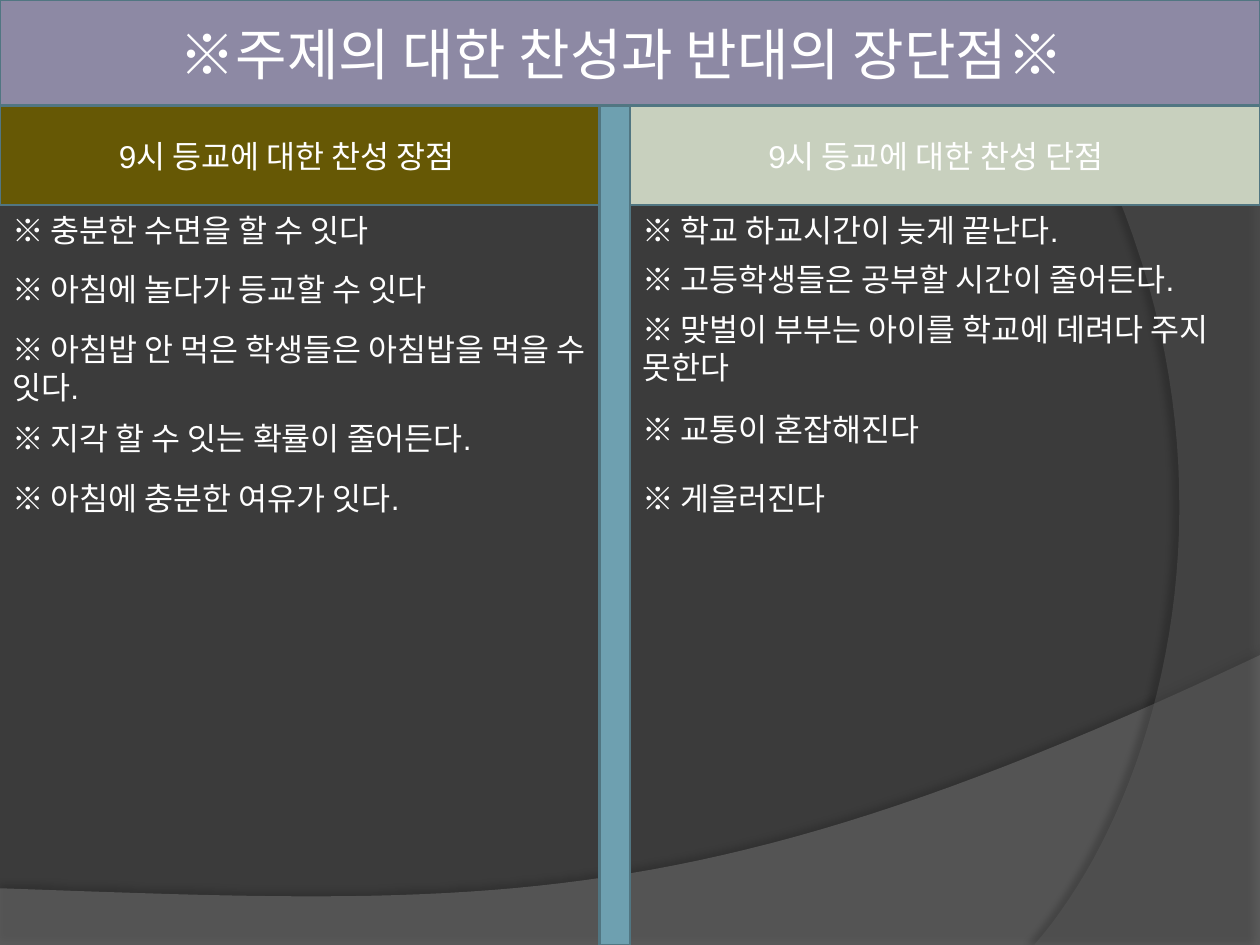
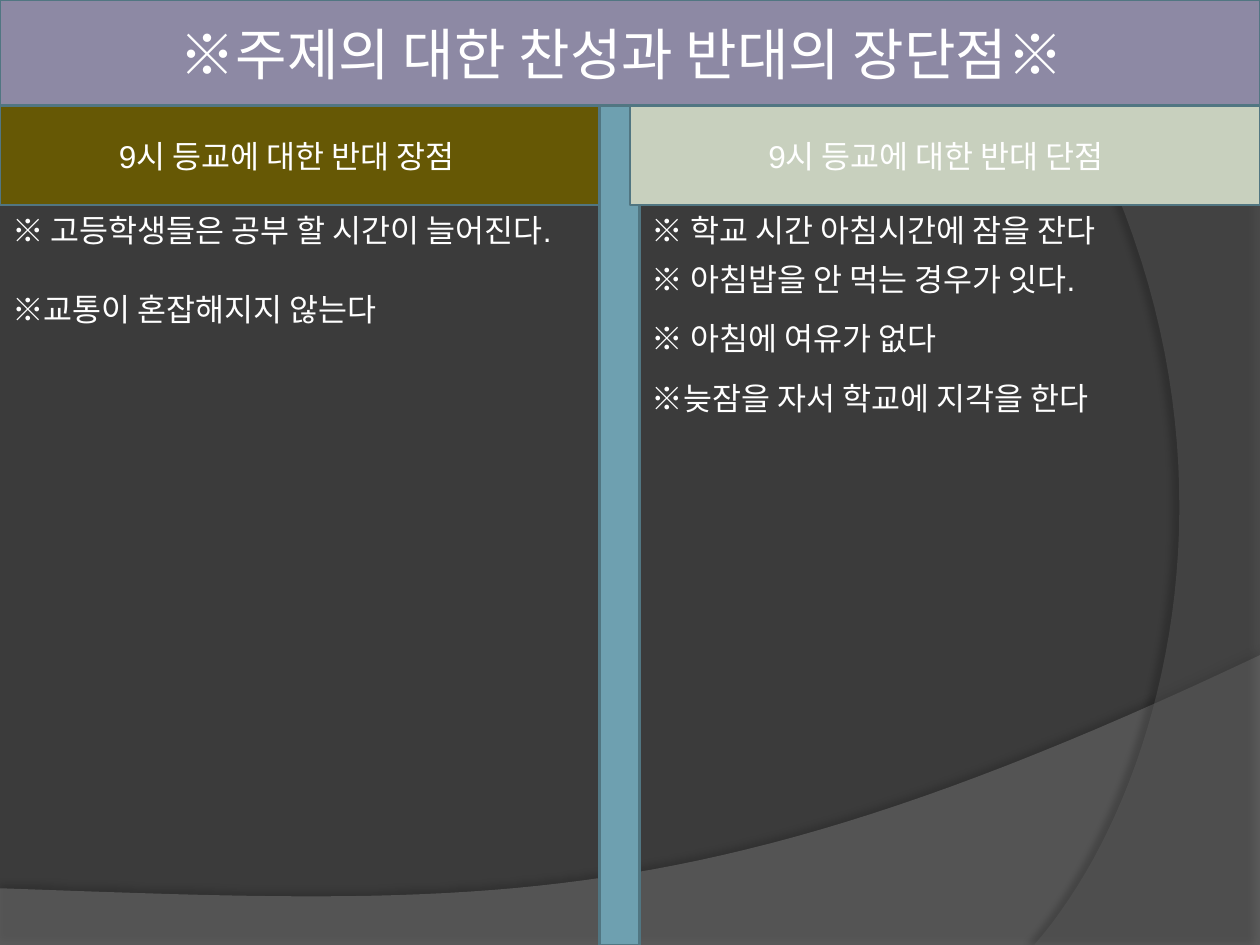
import dataclasses

import pptx
import pptx.dml.color
import pptx.enum.shapes
import pptx.enum.text
import pptx.oxml
import pptx.oxml.ns
import pptx.util
from lxml import etree

Pt = pptx.util.Pt


@dataclasses.dataclass(frozen=True)
class Theme:
    font: str = "Arial"
    title_size: int = 32
    body_size: int = 18
    text: str = "FFFFFF"
    background: str = "3B3B3B"
    title_band: str = "8D89A4"
    pros_band: str = "665805"
    cons_band: str = "C8D0BE"
    divider: str = "6EA0B0"
    outline: str = "517682"
    wave: str = "7F7F7F"
    arc: str = "5E5E5E"


THEME = Theme()

# Layout, in points
WIDTH, HEIGHT = 720, 540
TITLE_HEIGHT = 60.5
HEADER_HEIGHT = 56.7
PROS_WIDTH = 342.7
CONS_LEFT = 360
ITEM_HEIGHTS = {1: 29.1, 2: 50.9}  # by number of lines
SPACE_RATIO = 0.278  # width of a space relative to the type size

TITLE = "※주제의 대한 찬성과 반대의 장단점※"

# Each item: text, top, number of lines
SLIDES = [
    {
        "side": "찬성",
        "cons_text_left": 360,
        "pros": [
            ("※ 충분한 수면을 할 수 잇다", 117, 1),
            ("※ 아침에 놀다가 등교할 수 잇다", 151, 1),
            ("※ 아침밥 안 먹은 학생들은 아침밥을 먹을 수 잇다.", 185, 2),
            ("※ 지각 할 수 잇는 확률이 줄어든다.", 236, 1),
            ("※ 아침에 충분한 여유가 잇다.", 270, 1),
        ],
        "cons": [
            ("※ 학교 하교시간이 늦게 끝난다.", 117, 1),
            ("※ 고등학생들은 공부할 시간이 줄어든다.", 145, 1),
            ("※ 맞벌이 부부는 아이를 학교에 데려다 주지 못한다", 173.5, 2),
            ("※ 교통이 혼잡해진다", 230.5, 1),
            ("※ 게을러진다", 270, 1),
        ],
    },
    {
        "side": "반대",
        "cons_text_left": 365.5,
        "pros": [
            ("※ 고등학생들은 공부 할 시간이 늘어진다.", 117, 2),
            ("※교통이 혼잡해지지 않는다", 162, 1),
        ],
        "cons": [
            ("※ 학교 시간 아침시간에 잠을 잔다", 117, 1),
            ("※ 아침밥을 안 먹는 경우가 잇다.", 145, 1),
            ("※ 아침에 여유가 없다", 179, 1),
            ("※늦잠을 자서 학교에 지각을 한다", 213, 1),
        ],
    },
]


def rgb(value):
    return pptx.dml.color.RGBColor.from_string(value)


def style_text(frame, size):
    for para in frame.paragraphs:
        for span in para.runs:
            span.font.name = THEME.font
            span.font.size = Pt(size)
            span.font.color.rgb = rgb(THEME.text)


def add_band(page, left, top, width, height, fill, text="", size=THEME.body_size,
             shift_spaces=0):
    """Outlined rectangle; shift_spaces moves its centred text left."""
    band = page.shapes.add_shape(pptx.enum.shapes.MSO_SHAPE.RECTANGLE,
                                 Pt(left), Pt(top), Pt(width), Pt(height))
    band.shadow.inherit = False
    band.fill.solid()
    band.fill.fore_color.rgb = rgb(fill)
    band.line.color.rgb = rgb(THEME.outline)
    band.line.width = Pt(1.5)
    if text:
        frame = band.text_frame
        frame.text = text
        frame.word_wrap = True
        frame.vertical_anchor = pptx.enum.text.MSO_ANCHOR.MIDDLE
        frame.margin_right = Pt(7.2 + shift_spaces * SPACE_RATIO * size)
        frame.paragraphs[0].alignment = pptx.enum.text.PP_ALIGN.CENTER
        style_text(frame, size)


def add_item(page, left, text, top, lines):
    box = page.shapes.add_textbox(Pt(left), Pt(top), Pt(PROS_WIDTH),
                                  Pt(ITEM_HEIGHTS[lines]))
    frame = box.text_frame
    frame.word_wrap = True
    frame.auto_size = pptx.enum.text.MSO_AUTO_SIZE.SHAPE_TO_FIT_TEXT
    frame.text = text
    style_text(frame, THEME.body_size)


def curve(start, control_1, control_2, end, steps=48):
    """Points along a cubic curve, without its start."""
    points = []
    for step in range(1, steps + 1):
        t = step / steps
        weights = ((1 - t) ** 3, 3 * t * (1 - t) ** 2, 3 * t * t * (1 - t), t ** 3)
        corners = (start, control_1, control_2, end)
        points.append(tuple(sum(w * corner[axis] for w, corner in zip(weights, corners))
                            for axis in (0, 1)))
    return points


def add_sweep(page, points, fill, opacity, shadow_opacity, distance, direction):
    """Translucent background outline with a soft shadow."""
    builder = page.shapes.build_freeform(Pt(points[0][0]), Pt(points[0][1]))
    builder.add_line_segments([(Pt(x), Pt(y)) for x, y in points[1:]], close=True)
    sweep = builder.convert_to_shape()
    sweep.fill.solid()
    sweep.fill.fore_color.rgb = rgb(fill)
    sweep.line.fill.background()
    sweep.shadow.inherit = False
    qn = pptx.oxml.ns.qn
    color = sweep.fill._xPr.find(qn("a:solidFill"))[0]
    etree.SubElement(color, qn("a:alpha"), val=str(opacity * 1000))
    effects = sweep._element.spPr.find(qn("a:effectLst"))
    shadow = etree.SubElement(effects, qn("a:outerShdw"), blurRad=str(Pt(4)),
                              dist=str(Pt(distance)), dir=str(direction * 60000),
                              algn="ctr", rotWithShape="0")
    shadow_color = etree.SubElement(shadow, qn("a:srgbClr"), val="000000")
    etree.SubElement(shadow_color, qn("a:alpha"), val=str(shadow_opacity * 1000))


def add_backdrop(page):
    page.background.fill.solid()
    page.background.fill.fore_color.rgb = rgb(THEME.background)
    wave = [(0, 507.6), (0, HEIGHT), (WIDTH, HEIGHT), (WIDTH, 374.4)]
    wave += curve(wave[-1], (402.5, 524.9), (281.5, 517.7), wave[0])
    add_sweep(page, wave, THEME.wave, 45, 35, 3.5, 270)
    arc = [(WIDTH, 1.4), (WIDTH, HEIGHT), (591, HEIGHT)]
    arc += curve(arc[-1], (673.2, 445.7), (733, 216), (576, 0))
    add_sweep(page, arc, THEME.arc, 40, 45, 4, 180)


def add_comparison(deck, content):
    page = deck.slides.add_slide(deck.slide_layouts[6])
    add_backdrop(page)

    # Title, divider and column headers
    add_band(page, 0, 0, WIDTH, TITLE_HEIGHT, THEME.title_band, TITLE,
             THEME.title_size, shift_spaces=1)
    add_band(page, PROS_WIDTH, TITLE_HEIGHT, content["cons_text_left"] - PROS_WIDTH,
             HEIGHT - TITLE_HEIGHT, THEME.divider)
    heading = f"9시 등교에 대한 {content['side']}"
    add_band(page, 0, TITLE_HEIGHT, PROS_WIDTH, HEADER_HEIGHT, THEME.pros_band,
             f"{heading} 장점", shift_spaces=3)
    add_band(page, CONS_LEFT, TITLE_HEIGHT, WIDTH - CONS_LEFT, HEADER_HEIGHT,
             THEME.cons_band, f"{heading} 단점", shift_spaces=2)

    # Arguments in both columns
    for left, items in ((0, content["pros"]),
                        (content["cons_text_left"], content["cons"])):
        for text, top, lines in items:
            add_item(page, left, text, top, lines)


def main():
    deck = pptx.Presentation()
    deck.slide_width, deck.slide_height = Pt(WIDTH), Pt(HEIGHT)
    for content in SLIDES:
        add_comparison(deck, content)
    deck.save("out.pptx")


if __name__ == "__main__":
    main()
